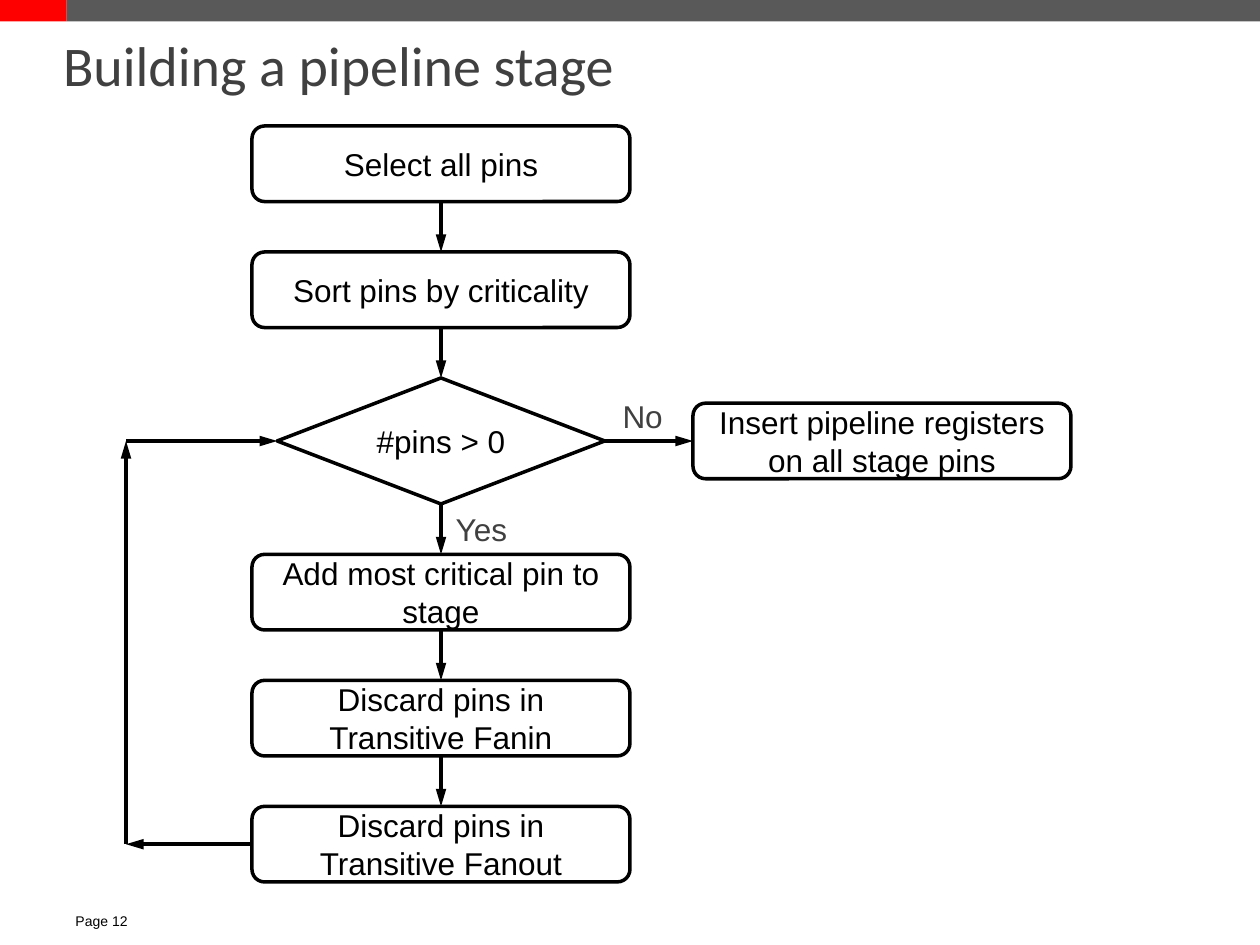
from lxml import etree
from pptx import Presentation
from pptx.dml.color import RGBColor
from pptx.enum import shapes, text
from pptx.oxml import ns
from pptx.util import Inches, Pt

BLACK, WHITE, DARK, GREY, RED = "000000", "FFFFFF", "404040", "595959", "FF0000"
TOP, LEFT, BOTTOM, RIGHT = range(4)
STEP_WIDTH, STEP_HEIGHT = 3, 0.6
COLUMN_LEFT, LOOP_X = 2, 1


def color(value):
    return RGBColor.from_string(value)


def write(shape, content, size, font_color, font="Arial", align=text.PP_ALIGN.CENTER):
    frame = shape.text_frame
    frame.text = content
    for paragraph in frame.paragraphs:
        paragraph.alignment = align
        for run in paragraph.runs:
            run.font.name = font
            run.font.size = Pt(size)
            run.font.color.rgb = color(font_color)
    return frame


def add_bar(slide, left, width, fill):
    bar = slide.shapes.add_shape(shapes.MSO_SHAPE.RECTANGLE, Inches(left), 0,
                                 Inches(width), Inches(0.17))
    bar.shadow.inherit = False
    bar.fill.solid()
    bar.fill.fore_color.rgb = color(fill)
    bar.line.fill.background()


def add_title(slide, content):
    title = slide.shapes.title
    title.left, title.top = Inches(0.5), Inches(0.23)
    title.width, title.height = Inches(9), Inches(0.6)
    frame = write(title, content, 32, DARK, "Calibri", text.PP_ALIGN.LEFT)
    frame.margin_left = 0
    frame.auto_size = text.MSO_AUTO_SIZE.NONE
    frame.vertical_anchor = text.MSO_ANCHOR.MIDDLE
    frame.paragraphs[0].line_spacing = 0.98


def add_node(slide, kind, left, top, width, height, content):
    node = slide.shapes.add_shape(kind, Inches(left), Inches(top),
                                  Inches(width), Inches(height))
    node.shadow.inherit = False
    node.fill.solid()
    node.fill.fore_color.rgb = color(WHITE)
    node.line.color.rgb = color(BLACK)
    node.line.width = Pt(2)
    frame = write(node, content, 18, BLACK)
    frame.word_wrap = True
    frame.vertical_anchor = text.MSO_ANCHOR.MIDDLE
    return node


def add_step(slide, left, top, content):
    return add_node(slide, shapes.MSO_SHAPE.ROUNDED_RECTANGLE, left, top,
                    STEP_WIDTH, STEP_HEIGHT, content)


def add_arrow(slide, start, end, source=None, target=None):
    """Draw an arrow; source and target are (node, side) pairs to join."""
    points = [Inches(value) for value in (*start, *end)]
    arrow = slide.shapes.add_connector(shapes.MSO_CONNECTOR.STRAIGHT, *points)
    if source:
        arrow.begin_connect(*source)
    if target:
        arrow.end_connect(*target)
    arrow.line.color.rgb = color(BLACK)
    arrow.line.width = Pt(2)
    etree.SubElement(arrow.line._get_or_add_ln(), ns.qn("a:tailEnd"),
                     type="triangle", w="med", len="lg")
    etree.SubElement(arrow._element.spPr, ns.qn("a:effectLst"))


def add_label(slide, left, top, width, height, content, size, font_color,
              inset=0, align=text.PP_ALIGN.CENTER):
    label = slide.shapes.add_textbox(Inches(left), Inches(top),
                                     Inches(width), Inches(height))
    frame = write(label, content, size, font_color, align=align)
    frame.margin_left = Inches(inset)
    frame.word_wrap = False


def add_flow(slide):
    decision = add_node(slide, shapes.MSO_SHAPE.DIAMOND, 2.2, 3, 2.6, 1, "#pins > 0")
    select, sort, add, fanin, fanout = [
        add_step(slide, COLUMN_LEFT, top, content) for top, content in (
            (1, "Select all pins"),
            (2, "Sort pins by criticality"),
            (4.4, "Add most critical pin to stage"),
            (5.4, "Discard pins in Transitive Fanin"),
            (6.4, "Discard pins in Transitive Fanout"))]
    insert = add_step(slide, 5.5, 3.2, "Insert pipeline registers\non all stage pins")

    column = [select, sort, decision, add, fanin, fanout]
    center = COLUMN_LEFT + STEP_WIDTH / 2
    for upper, lower in zip(column, column[1:]):
        add_arrow(slide, (center, (upper.top + upper.height).inches
                          if hasattr(upper.top + upper.height, "inches")
                          else (upper.top + upper.height) / Inches(1)),
                  (center, lower.top.inches), (upper, BOTTOM), (lower, TOP))
    add_arrow(slide, (4.8, 3.5), (5.5, 3.5), (decision, RIGHT), (insert, LEFT))

    add_arrow(slide, (COLUMN_LEFT, 6.7), (LOOP_X, 6.7), source=(fanout, LEFT))
    add_arrow(slide, (LOOP_X, 6.7), (LOOP_X, 3.5))
    add_arrow(slide, (LOOP_X, 3.5), (2.2, 3.5), target=(decision, LEFT))

    add_label(slide, 3.6, 4, 0.54, 0.4, "Yes", 18, DARK)
    add_label(slide, 4.9, 3.1, 0.5, 0.4, "No", 18, DARK)


def main():
    deck = Presentation()
    deck.slide_width, deck.slide_height = Inches(10), Inches(7.5)
    slide = deck.slides.add_slide(deck.slide_layouts[5])
    add_bar(slide, 0.53, 9.47, GREY)
    add_bar(slide, 0, 0.53, RED)
    add_title(slide, "Building a pipeline stage")
    add_flow(slide)
    add_label(slide, 0.5, 7.19, 0.92, 0.27, "Page 12", 8, BLACK, 0.1,
              text.PP_ALIGN.LEFT)
    deck.save("out.pptx")


if __name__ == "__main__":
    main()
